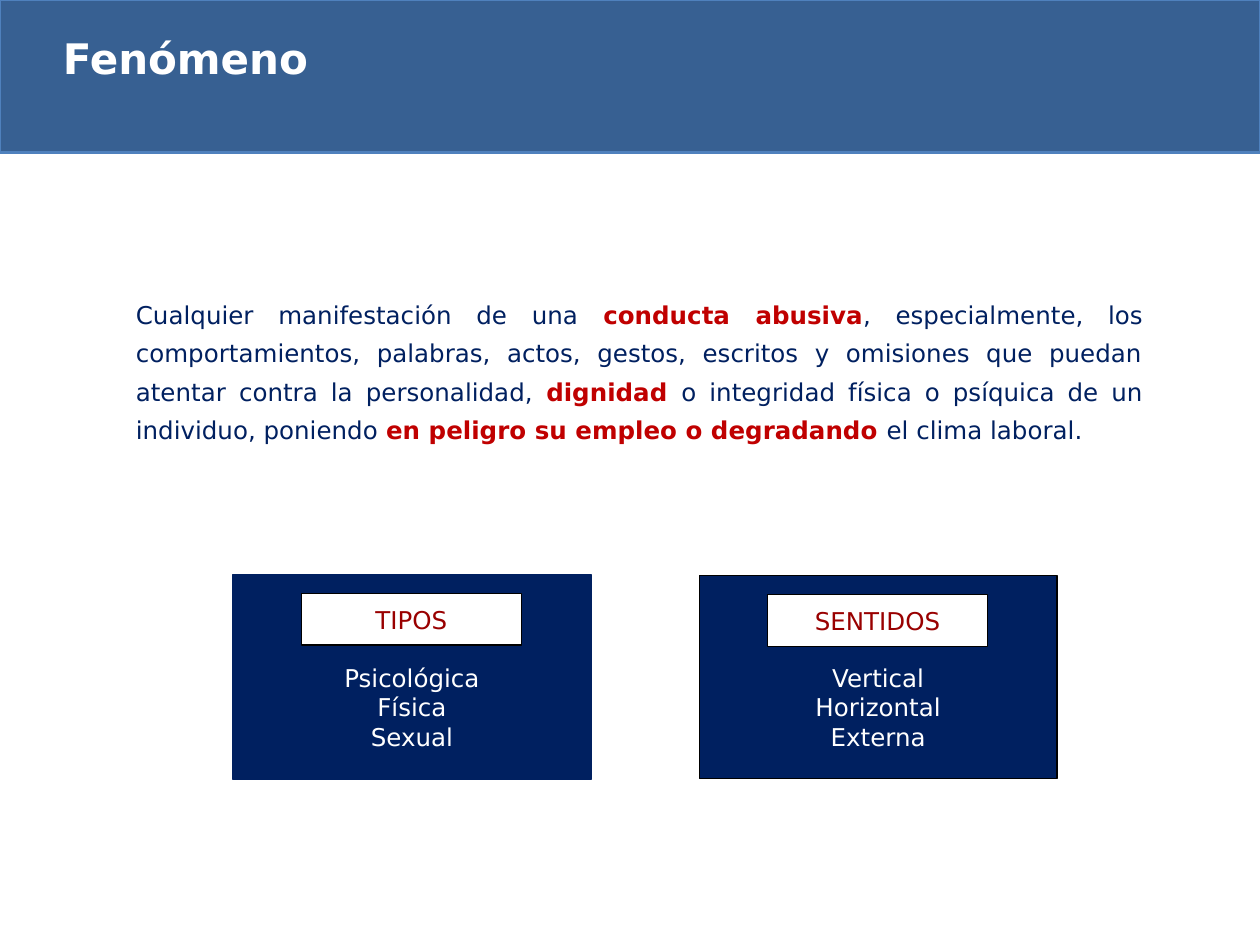
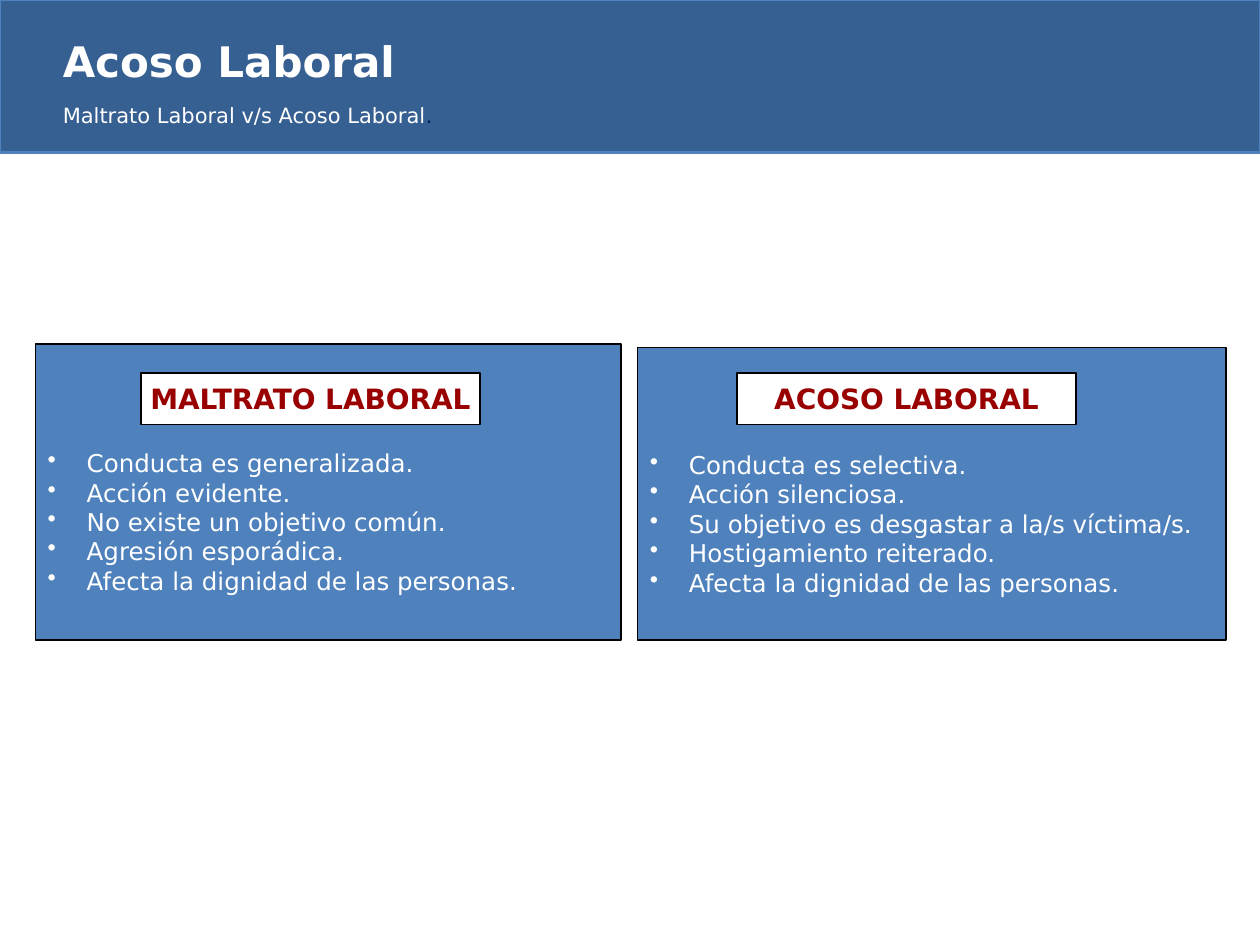
"""Build two slides on workplace harassment: the phenomenon and its contrast with mistreatment."""
from dataclasses import dataclass

from lxml.etree import SubElement
from pptx import Presentation
from pptx.dml.color import RGBColor as RGB
from pptx.enum.shapes import MSO_SHAPE as SHAPE
from pptx.enum.text import MSO_ANCHOR as ANCHOR, PP_ALIGN as ALIGN
from pptx.oxml.ns import qn
from pptx.util import Inches, Pt


@dataclass(frozen=True)
class Theme:
    font: str = "DejaVu Sans"
    band: str = "376092"
    blue: str = "4F81BD"
    navy: str = "002060"
    accent: str = "C00000"
    label: str = "990000"
    white: str = "FFFFFF"
    black: str = "000000"
    title: int = 24
    heading: int = 16
    body: int = 14
    subtitle: int = 12


T = Theme()
CELL = Inches(0.1)
INDENT = 3.1
LABEL_ROOM = 5.2
LABEL_H = 4.1
BAND = (0, 0, 100, 12.1)
STRONG = dict(color=T.accent, bold=True)

SLIDES = [
    dict(
        title=["Fenómeno"], title_box=(4, 2.1, 93.7, 5), title_format={},
        definition=[[
            "Cualquier manifestación de una ", ("conducta abusiva", STRONG),
            ", especialmente, los comportamientos, palabras, actos, gestos, escritos y omisiones "
            "que puedan atentar contra la personalidad, ", ("dignidad ", STRONG),
            "o integridad física o psíquica de un individuo, poniendo ",
            ("en peligro su empleo o degradando ", STRONG), "el clima laboral.",
        ]],
        fill=T.navy, label_w=17.5, label_format=dict(size=T.body),
        items_format=dict(align=ALIGN.CENTER),
        cards=[
            dict(box=(18.5, 45.6, 28.4, 16.3), line=T.navy, label="TIPOS", label_at=(23.9, 47.1),
                 items=["Psicológica", "Física", "Sexual"]),
            dict(box=(55.5, 45.7, 28.4, 16.1), line=T.black, label="SENTIDOS", label_at=(60.9, 47.2),
                 items=["Vertical", "Horizontal", "Externa"]),
        ],
    ),
    dict(
        title=["Acoso Laboral",
               [("Maltrato Laboral v/s Acoso Laboral", dict(size=T.subtitle, bold=False)),
                (".", dict(size=T.subtitle, bold=False, color=T.navy))]],
        title_box=(4, 3, 93.7, 11.1), title_format=dict(align=ALIGN.JUSTIFY, spacing=24),
        definition=None,
        fill=T.blue, label_w=26.9, label_format=dict(size=T.heading, bold=True),
        items_format=dict(bullet="•"),
        cards=[
            dict(box=(2.8, 27.3, 46.5, 23.5), line=T.black, label="MALTRATO LABORAL",
                 label_at=(11.2, 29.6),
                 items=["Conducta es generalizada.", "Acción evidente.",
                        "No existe un objetivo común.", "Agresión esporádica.",
                        "Afecta la dignidad de las personas."]),
            dict(box=(50.6, 27.6, 46.7, 23.2), line=T.black, label="ACOSO LABORAL",
                 label_at=(58.5, 29.6),
                 items=["Conducta es selectiva.", "Acción silenciosa.",
                        "Su objetivo es desgastar a la/s víctima/s.", "Hostigamiento reiterado.",
                        "Afecta la dignidad de las personas."]),
        ],
    ),
]


def cells(*values):
    return [round(v * CELL) for v in values]


def write(sp, paragraphs, size=T.body, color=T.white, bold=False, align=ALIGN.LEFT,
          spacing=None, bullet=None, anchor=ANCHOR.MIDDLE, wrap=True, top=0.5):
    tf = sp.text_frame
    tf.word_wrap, tf.vertical_anchor = wrap, anchor
    tf.margin_top = cells(top)[0]
    for i, runs in enumerate(paragraphs):
        p = tf.add_paragraph() if i else tf.paragraphs[0]
        p.alignment = align
        if spacing:
            p.line_spacing = Pt(spacing)
        if bullet:
            indent = cells(INDENT)[0]
            pPr = p._p.get_or_add_pPr()
            pPr.set("marL", str(indent))
            pPr.set("indent", str(-indent))
            SubElement(pPr, qn("a:buChar")).set("char", bullet)
        for run in [runs] if isinstance(runs, str) else runs:
            words, own = (run, {}) if isinstance(run, str) else run
            look = dict(size=size, color=color, bold=bold) | own
            r = p.add_run()
            r.text = words
            r.font.name, r.font.size, r.font.bold = T.font, Pt(look["size"]), look["bold"]
            r.font.color.rgb = RGB.from_string(look["color"])


def rectangle(s, box, fill, line, width=0.75):
    sp = s.shapes.add_shape(SHAPE.RECTANGLE, *cells(*box))
    sp.shadow.inherit = False
    sp.fill.solid()
    sp.fill.fore_color.rgb = RGB.from_string(fill)
    sp.line.color.rgb = RGB.from_string(line)
    sp.line.width = Pt(width)
    return sp


def text_box(s, box, paragraphs, **fmt):
    write(s.shapes.add_textbox(*cells(*box)), paragraphs, anchor=ANCHOR.TOP, **fmt)


def build_slide(prs, data):
    s = prs.slides.add_slide(prs.slide_layouts[6])
    rectangle(s, BAND, T.band, T.blue, 1.5)
    text_box(s, data["title_box"], data["title"], size=T.title, bold=True, **data["title_format"])
    if data["definition"]:
        text_box(s, (9.8, 22.6, 81.9, 13.4), data["definition"], color=T.navy,
                 align=ALIGN.JUSTIFY, spacing=22)
    for card in data["cards"]:
        sp = rectangle(s, card["box"], data["fill"], card["line"])
        write(sp, card["items"], top=LABEL_ROOM, **data["items_format"])
        label = rectangle(s, (*card["label_at"], data["label_w"], LABEL_H), T.white, T.black)
        write(label, [card["label"]], color=T.label, align=ALIGN.CENTER, wrap=False,
              **data["label_format"])


def main():
    prs = Presentation()
    prs.slide_width, prs.slide_height = cells(100, 75)
    for data in SLIDES:
        build_slide(prs, data)
    prs.save("out.pptx")


if __name__ == "__main__":
    main()
